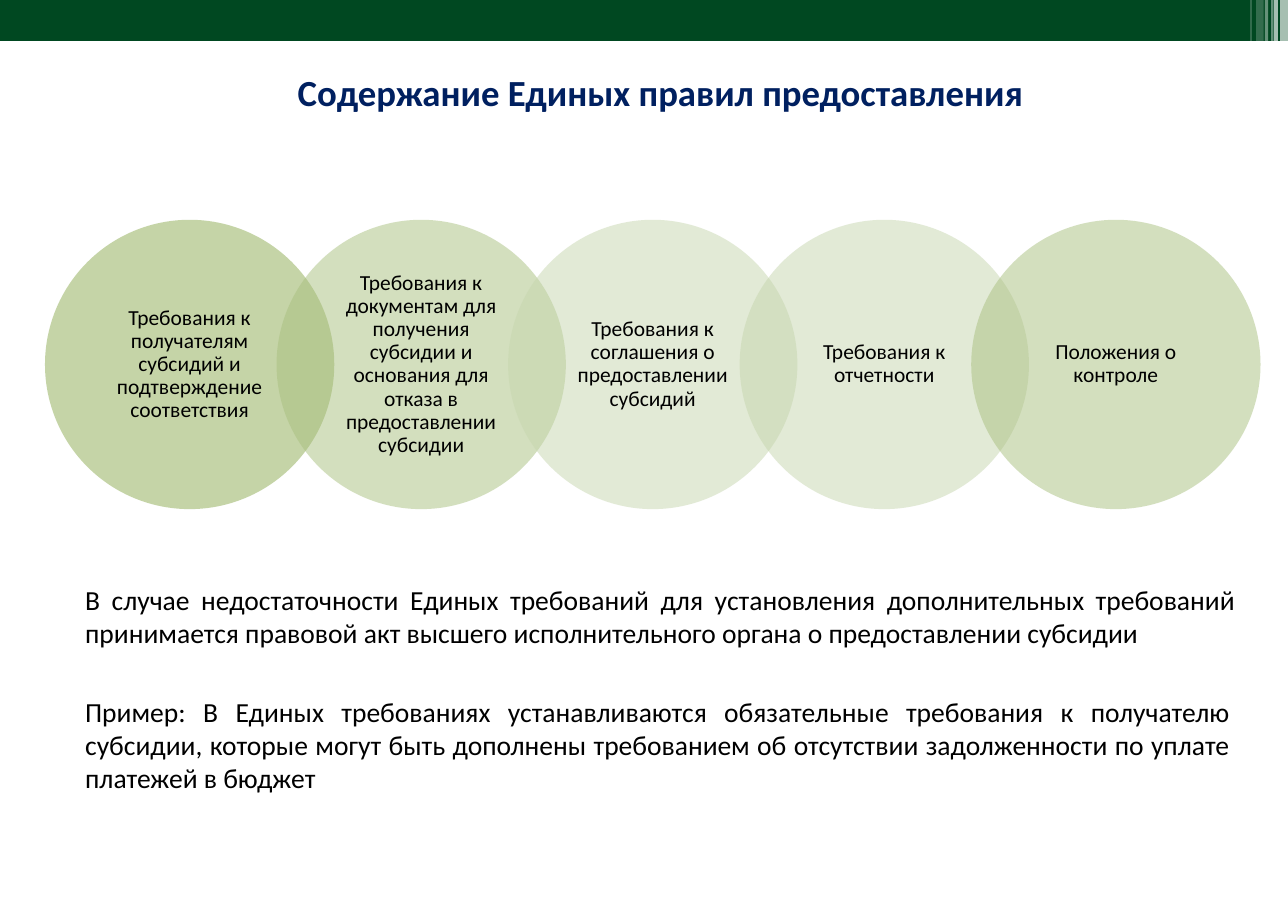
from lxml import etree
from pptx import Presentation
from pptx.dml.color import RGBColor
from pptx.enum import shapes, text
from pptx.oxml import ns
from pptx.util import Pt

DARK_GREEN = RGBColor(0x00, 0x48, 0x21)
OLIVE = RGBColor(0x8D, 0xAA, 0x51)
SAGE = RGBColor(0xA9, 0xC0, 0x7F)
PALE_SAGE = RGBColor(0xC6, 0xD6, 0xAE)
NAVY = RGBColor(0x00, 0x20, 0x60)
WHITE = RGBColor(0xFF, 0xFF, 0xFF)
BLACK = RGBColor(0x00, 0x00, 0x00)

presentation = Presentation()
presentation.slide_width, presentation.slide_height = Pt(841), Pt(594.7)
slide = presentation.slides.add_slide(presentation.slide_layouts[6])


def add_filled(kind, left, top, width, height, color, opacity=100):
    """Add a borderless preset shape; opacity is a percentage."""
    shape = slide.shapes.add_shape(kind, Pt(left), Pt(top), Pt(width), Pt(height))
    shape.shadow.inherit = False
    shape.line.fill.background()
    shape.fill.solid()
    shape.fill.fore_color.rgb = color
    if opacity < 100:
        color_element = shape.fill._xPr.find(".//" + ns.qn("a:srgbClr"))
        etree.SubElement(color_element, ns.qn("a:alpha"), val=str(opacity * 1000))
    return shape


def write(shape, content, size, color=BLACK, bold=False, align=text.PP_ALIGN.LEFT,
          anchor=text.MSO_ANCHOR.TOP, margins=(7.2, 3.6), line_spacing=1.0):
    frame = shape.text_frame
    frame.word_wrap = True
    frame.vertical_anchor = anchor
    frame.margin_left = frame.margin_right = Pt(margins[0])
    frame.margin_top = frame.margin_bottom = Pt(margins[1])
    paragraph = frame.paragraphs[0]
    paragraph.alignment = align
    paragraph.line_spacing = line_spacing
    run = paragraph.add_run()
    run.text = content
    run.font.name, run.font.size, run.font.bold = "Calibri", Pt(size), bold
    run.font.color.rgb = color


# Header band with light stripes at its right end
RECTANGLE = shapes.MSO_SHAPE.RECTANGLE
add_filled(RECTANGLE, 0, 0, 841, 26.8, DARK_GREEN)
for left, width, opacity in [
    (835.9, 5.1, 65), (831.6, 2.9, 65), (830.2, 0.8, 60),
    (825.9, 2.2, 40), (820.2, 5, 20), (816.5, 0.8, 30),
]:
    add_filled(RECTANGLE, left, 0, width, 27.2, WHITE, opacity)

title = slide.shapes.add_textbox(Pt(43.5), Pt(42.2), Pt(775.4), Pt(36))
write(title, "Содержание Единых правил предоставления", 24, NAVY, bold=True,
      align=text.PP_ALIGN.CENTER)

# Row of overlapping circles
DIAMETER, STEP = 188.9, 151.2
for index, (topic, color) in enumerate([
    ("Требования к получателям субсидий и подтверждение соответствия", OLIVE),
    ("Требования к документам для получения субсидии и основания для отказа "
     "в предоставлении субсидии", SAGE),
    ("Требования к соглашения о предоставлении субсидий", PALE_SAGE),
    ("Требования к отчетности", PALE_SAGE),
    ("Положения о контроле", SAGE),
]):
    circle = add_filled(shapes.MSO_SHAPE.OVAL, 29.4 + index * STEP, 143.5,
                        DIAMETER, DIAMETER, color, 50)
    write(circle, topic, 14, align=text.PP_ALIGN.CENTER, anchor=text.MSO_ANCHOR.MIDDLE,
          margins=(10.4, 1.4), line_spacing=0.9)

for note, top, width, height in [
    ("В случае недостаточности Единых требований для установления дополнительных "
     "требований принимается правовой акт высшего исполнительного органа "
     "о предоставлении субсидии", 376.8, 765.4, 51),
    ("Пример: В Единых требованиях устанавливаются обязательные требования "
     "к получателю субсидии, которые могут быть дополнены требованием "
     "об отсутствии задолженности по уплате платежей в бюджет", 450.2, 761.8, 72.7),
]:
    box = slide.shapes.add_textbox(Pt(48.5), Pt(top), Pt(width), Pt(height))
    write(box, note, 18, align=text.PP_ALIGN.JUSTIFY)

presentation.save("out.pptx")
